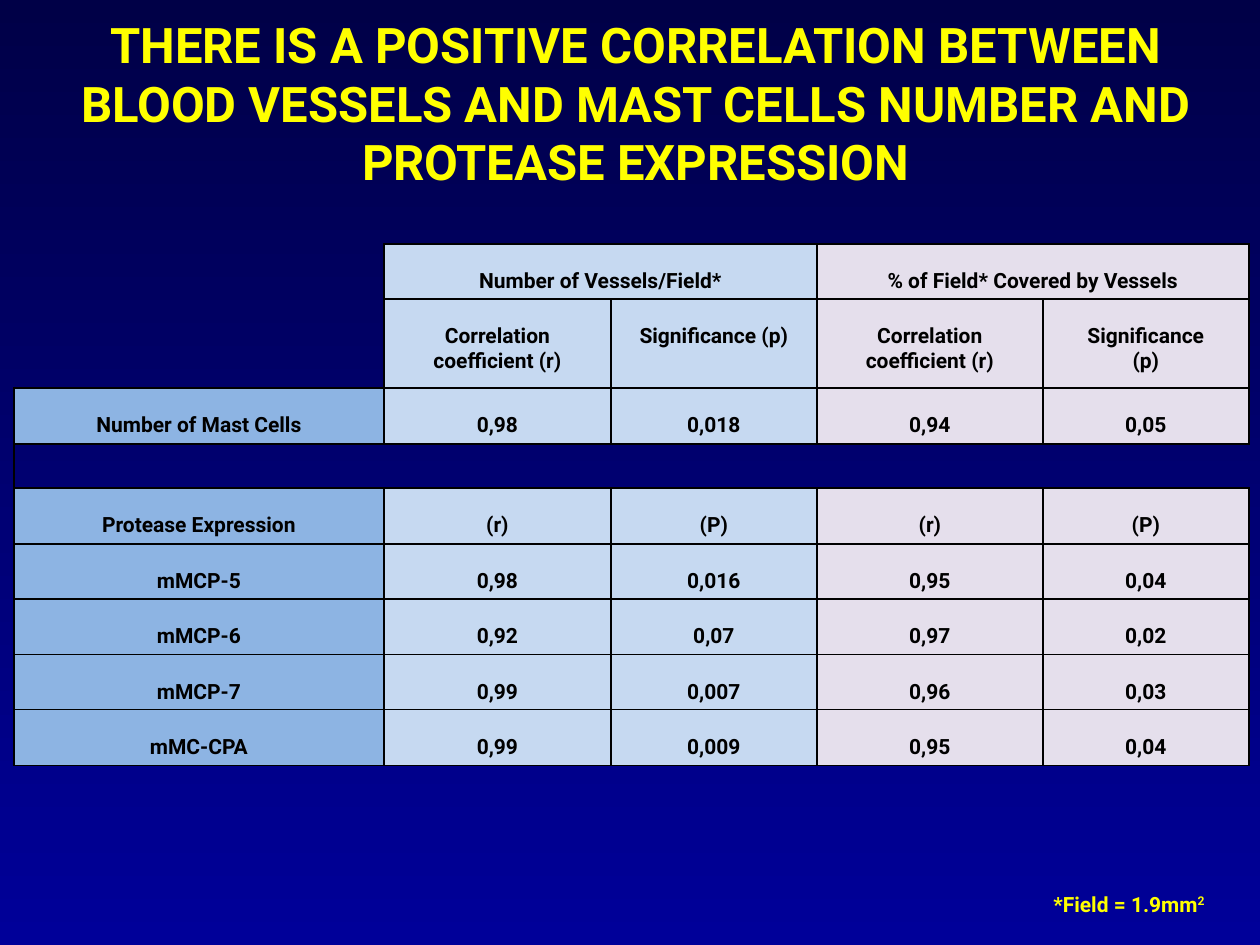
"""Builds a slide with a table correlating blood vessels with mast cells and proteases."""
from pptx import Presentation
from pptx.dml.color import RGBColor as RGB
from pptx.enum.text import MSO_ANCHOR as ANCHOR, MSO_AUTO_SIZE as AUTO, PP_ALIGN as ALIGN
from pptx.oxml import parse_xml
from pptx.oxml.ns import nsdecls
from pptx.util import Pt

PX = 914400 // 126
COLORS = {"top": "000047", "bottom": "000099", "yellow": "FFFF00", "black": "000000",
          "label": "8DB4E3", "count": "C6D9F1", "cover": "E5DFEC"}
TITLE = ("THERE IS A POSITIVE CORRELATION BETWEEN BLOOD VESSELS AND MAST CELLS "
         "NUMBER AND PROTEASE EXPRESSION")
ROWS = [
    ("", "Number of Vessels/Field*", "", "% of Field* Covered by Vessels", ""),
    ("", "Correlation coefficient (r)", "Significance (p)",
     "Correlation coefficient (r)", "Significance\n(p)"),
    ("Number of Mast Cells", "0,98", "0,018", "0,94", "0,05"),
    ("", "", "", "", ""),
    ("Protease Expression", "(r)", "(P)", "(r)", "(P)"),
    ("mMCP-5", "0,98", "0,016", "0,95", "0,04"),
    ("mMCP-6", "0,92", "0,07", "0,97", "0,02"),
    ("mMCP-7", "0,99", "0,007", "0,96", "0,03"),
    ("mMC-CPA", "0,99", "0,009", "0,95", "0,04"),
]
COL_FILLS = ["label", "count", "count", "cover", "cover"]
COL_WIDTHS = [370, 227, 206, 226, 206]
ROW_HEIGHTS = [55, 89, 56, 44, 56, 55, 56, 55, 56]
TABLE_AT = (14, 244)
HEADER_ROWS, GAP_ROW, LAST_COL = 2, 3, 4
MERGED = [(0, 1), (0, 3), (GAP_ROW, 1), (GAP_ROW, 3)]
NO_STYLE = "{2D5ABB26-0587-4C30-8999-92F81FD0307C}"
CELL_FORMAT = {"margin_left": 10 * PX, "margin_right": 10 * PX,
               "margin_top": 25 * PX, "margin_bottom": 0}


def px(*values):
    return [v * PX for v in values]


def style(r, size, color):
    for name, value in {"name": "Roboto", "size": Pt(size), "bold": True}.items():
        setattr(r.font, name, value)
    r.font.color.rgb = RGB.from_string(COLORS[color])


def sides(row, col):
    if row == GAP_ROW:
        return "TB" + "L" * (col == 0) + "R" * (col == LAST_COL)
    if row < HEADER_ROWS and col == 0:
        return "R" + "B" * (row == HEADER_ROWS - 1)
    return "LRTB"


def set_borders(cell, shown):
    tcPr = cell._tc.get_or_add_tcPr()
    for i, side in enumerate("LRTB"):
        paint = (f'<a:solidFill><a:srgbClr val="{COLORS["black"]}"/></a:solidFill>'
                 if side in shown else "<a:noFill/>")
        tcPr.insert(i, parse_xml(f'<a:ln{side} {nsdecls("a")} w="12700">{paint}</a:ln{side}>'))


def fill_cell(cell, row, col):
    text = ROWS[row][col]
    empty = row == GAP_ROW or (row < HEADER_ROWS and col == 0)
    for name, value in CELL_FORMAT.items():
        setattr(cell, name, 0 if empty else value)
    if empty:
        cell.fill.background()
    else:
        cell.fill.solid()
        cell.fill.fore_color.rgb = RGB.from_string(COLORS[COL_FILLS[col]])
    set_borders(cell, sides(row, col))
    cell.text = text
    for p in cell.text_frame.paragraphs:
        p.alignment = ALIGN.CENTER
        for r in p.runs:
            style(r, 12, "black")
        if not text:
            p._p.append(parse_xml(f'<a:endParaRPr {nsdecls("a")} sz="1200"/>'))


def add_table(s):
    size = sum(COL_WIDTHS), sum(ROW_HEIGHTS)
    shape = s.shapes.add_table(len(ROWS), len(COL_WIDTHS), *px(*TABLE_AT, *size))
    table = shape.table
    table.first_row = table.horz_banding = False
    table._tbl.tblPr[0].text = NO_STYLE
    for column, width in zip(table.columns, px(*COL_WIDTHS)):
        column.width = width
    for line, height in zip(table.rows, px(*ROW_HEIGHTS)):
        line.height = height
    for row, texts in enumerate(ROWS):
        for col in range(len(texts)):
            fill_cell(table.cell(row, col), row, col)
    for row, col in MERGED:
        table.cell(row, col).merge(table.cell(row, col + 1))


def add_text(s, box, runs, size, align, **frame):
    tf = s.shapes.add_textbox(*px(*box)).text_frame
    for name, value in frame.items():
        setattr(tf, name, value)
    p = tf.paragraphs[0]
    p.alignment = align
    for text in runs:
        r = p.add_run()
        r.text = text
        style(r, size, "yellow")
    return p


def main():
    prs = Presentation()
    prs.slide_width, prs.slide_height = px(1260, 945)
    s = prs.slides.add_slide(prs.slide_layouts[6])
    fill = s.background.fill
    fill.gradient()
    fill.gradient_angle = 270
    for stop, name in zip(fill.gradient_stops, ("top", "bottom")):
        stop.color.rgb = RGB.from_string(COLORS[name])
    add_table(s)
    add_text(s, (18, 20, 1235, 165), [TITLE], 28, ALIGN.CENTER,
             word_wrap=True, vertical_anchor=ANCHOR.MIDDLE)
    note = add_text(s, (1041, 885, 203, 38), ["*Field = 1.9mm", "2"], 12, ALIGN.LEFT,
                    word_wrap=False, auto_size=AUTO.SHAPE_TO_FIT_TEXT)
    note.runs[1]._r.get_or_add_rPr().set("baseline", "30000")
    prs.save("out.pptx")


if __name__ == "__main__":
    main()
